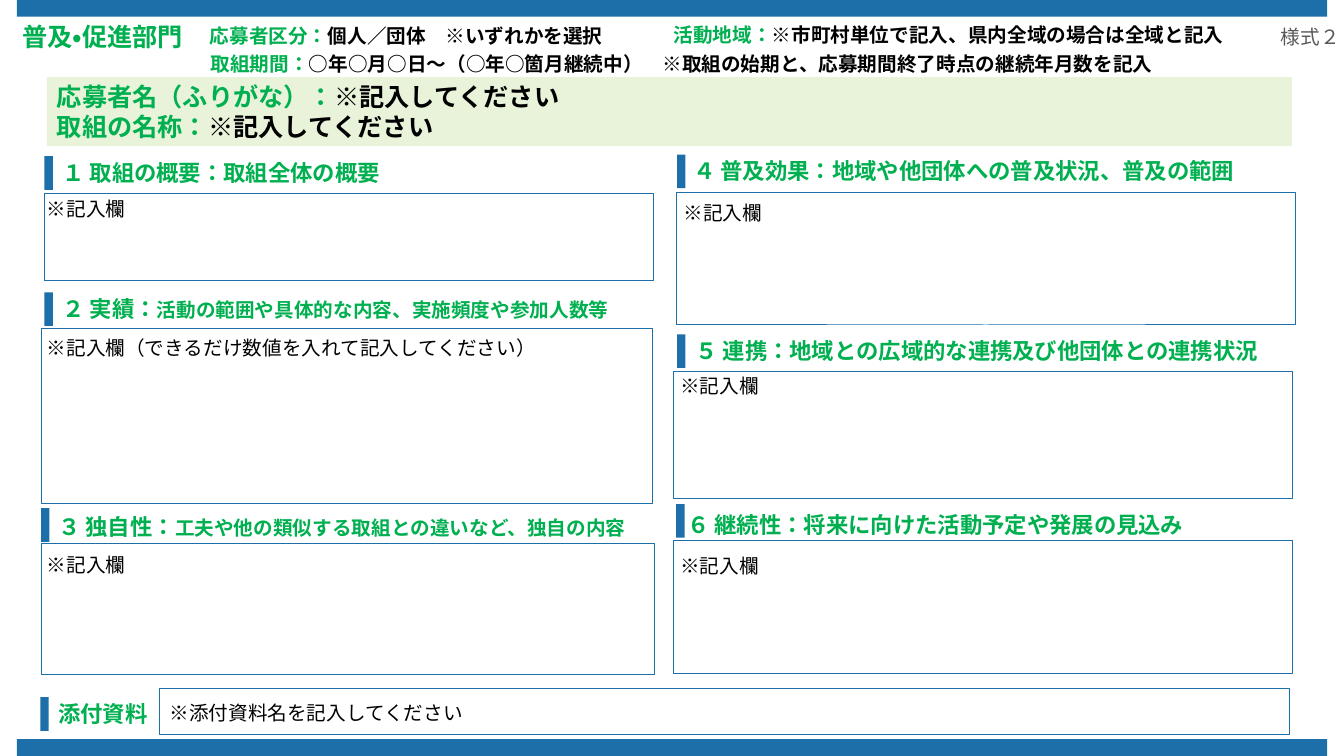
from pptx import Presentation
from pptx.dml.color import RGBColor
from pptx.enum.lang import MSO_LANGUAGE_ID
from pptx.enum.shapes import MSO_SHAPE
from pptx.enum.text import MSO_ANCHOR, MSO_AUTO_SIZE, PP_ALIGN
from pptx.util import Inches, Pt

RECTANGLE = MSO_SHAPE.RECTANGLE
MIDDLE, TOP = MSO_ANCHOR.MIDDLE, MSO_ANCHOR.TOP
FIT_SHAPE = MSO_AUTO_SIZE.SHAPE_TO_FIT_TEXT
CENTER, LEFT = PP_ALIGN.CENTER, PP_ALIGN.LEFT
JAPANESE = MSO_LANGUAGE_ID.JAPANESE

COLUMNS, ROWS = 160, 90
BLUE, GREEN, PALE = "1D6FA9", "00B050", "E8F3DA"
BLACK, GRAY = "000000", "595959"

SECTIONS = [
    ((5.3, 18.6), (6.24, 18.36, 40.7), (5.3, 23, 72.5, 10.4), (4.4, 22.9, 76.2),
     "１ 取組の概要：取組全体の概要", "", "※記入欄"),
    ((5.3, 34.8), (6.24, 34.56, 68), (4.9, 39.1, 72.8, 20.9), (4.4, 39.4, 73.6),
     "２ 実績：", "活動の範囲や具体的な内容、実施頻度や参加人数等",
     "※記入欄（できるだけ数値を入れて記入してください）"),
    ((4.9, 60.5), (5.76, 60.48, 70.7), (4.9, 64.7, 73, 15.6), (4.4, 65.2, 73),
     "３ 独自性：", "工夫や他の類似する取組との違いなど、独自の内容", "※記入欄"),
    ((80.6, 18.4), (81.36, 18.12, 67.1), (80.5, 22.9, 73.7, 15.8), (80.2, 23.3, 74.3),
     "４ 普及効果：地域や他団体への普及状況、普及の範囲", "", "※記入欄"),
    ((80.6, 39.8), (81.6, 39.6, 69.7), (80.2, 44.2, 73.7, 15.1), (79.8, 43.9, 75.4),
     "５ 連携：地域との広域的な連携及び他団体との連携状況", "", "※記入欄"),
    ((80.5, 60), (80.64, 60.24, 62.3), (80.2, 64.4, 73.7, 15.8), (79.8, 65.3, 74.3),
     "６ 継続性：将来に向けた活動予定や発展の見込み", "", "※記入欄"),
    ((4.8, 83), (5.76, 82.8, 13.2), (19, 82, 134.5, 5.4), (19, 82.8, 102.6),
     "添付資料", "", "※添付資料名を記入してください"),
]


def color(code):
    """Turn a hex string into a colour."""
    return RGBColor.from_string(code)


class FormSlide:
    """Draws the entry form on a grid of square cells."""

    font = "Calibri"

    def __init__(self, deck):
        """Add a title-only page to the deck."""
        self.page = deck.slides.add_slide(deck.slide_layouts[5])
        self.cell_width = deck.slide_width / COLUMNS
        self.cell_height = deck.slide_height / ROWS

    def area(self, left, top, width, height):
        """Convert grid cells to slide lengths."""
        return (round(left * self.cell_width), round(top * self.cell_height),
                round(width * self.cell_width), round(height * self.cell_height))

    def add_spans(self, para, spans, align=LEFT):
        """Add (text, size, colour, bold) spans to a paragraph."""
        para.alignment = align
        for text, size, code, bold in spans:
            span = para.add_run()
            span.text = text
            span.font.name, span.font.size, span.font.bold = self.font, Pt(size), bold
            span.font.color.rgb = color(code)
            span.font.language_id = JAPANESE

    def rectangle(self, cells, fill=None, line=None):
        """Draw a rectangle with an optional fill and outline."""
        box = self.page.shapes.add_shape(RECTANGLE, *self.area(*cells))
        box.shadow.inherit = False
        if fill:
            box.fill.solid()
            box.fill.fore_color.rgb = color(fill)
        else:
            box.fill.background()
        if line:
            box.line.color.rgb = color(line)
            box.line.width = Pt(0.75)
        else:
            box.line.fill.background()
        return box

    def panel(self, cells, lines):
        """Draw a filled panel with one paragraph per line."""
        frame = self.rectangle(cells, fill=PALE).text_frame
        frame.vertical_anchor = MIDDLE
        for index, spans in enumerate(lines):
            para = frame.add_paragraph() if index else frame.paragraphs[0]
            self.add_spans(para, spans)

    def title(self, cells, spans):
        """Move and fill the title placeholder."""
        box = self.page.shapes.title
        box.left, box.top, box.width, box.height = self.area(*cells)
        frame = box.text_frame
        frame.word_wrap, frame.auto_size = False, FIT_SHAPE
        frame.vertical_anchor = TOP
        self.add_spans(frame.paragraphs[0], spans, CENTER)

    def text(self, cells, spans, wrap=True):
        """Add a one-paragraph text box."""
        frame = self.page.shapes.add_textbox(*self.area(*cells)).text_frame
        frame.word_wrap, frame.auto_size = wrap, FIT_SHAPE
        self.add_spans(frame.paragraphs[0], spans)

    def section(self, bar, heading, entry, note, label, detail, hint):
        """Draw a marked heading with its entry box and hint."""
        self.rectangle(entry, line=BLUE)
        self.rectangle((*bar, 1, 4), fill=BLUE)
        spans = [(label, 16, GREEN, True)]
        if detail:
            spans.append((detail, 14, GREEN, True))
        self.text((*heading, 4.4), spans, wrap=False)
        self.text((*note, 4.1), [(hint, 14, BLACK, False)])

    def field(self, cells, label, value):
        """Add a green label followed by a black value."""
        self.text(cells, [(label, 14, GREEN, True), (value, 14, BLACK, True)])


def main():
    """Build and save the form."""
    deck = Presentation()
    deck.slide_width, deck.slide_height = Inches(13.333), Inches(7.5)
    form = FormSlide(deck)
    for top in (0, ROWS - 2):
        form.rectangle((2, top, COLUMNS - 4, 2), fill=BLUE)
    form.title((0.4, 1.9, 23.6, 4.8), [("普及・促進部門", 18, GREEN, True)])
    form.panel((5.6, 9.2, 148.2, 8.2), [
        [(label, 18, GREEN, True), ("※記入してください", 18, BLACK, True)]
        for label in ("応募者名（ふりがな）：", "取組の名称：")])
    form.field((23.8, 2.2, 56.9, 4.1), "応募者区分：", "個人／団体　※いずれかを選択")
    form.field((79, 2.1, 69, 4.1), "活動地域：",
               "※市町村単位で記入、県内全域の場合は全域と記入")
    form.field((23.9, 5.6, 129.8, 4.1), "取組期間：",
               "○年○月○日～（○年○箇月継続中）　※取組の始期と、応募期間終了時点の継続年月数を記入")
    form.text((151.3, 2.4, 13.2, 4.1), [("様式２", 14, GRAY, False)])
    for section in SECTIONS:
        form.section(*section)
    deck.save("out.pptx")


if __name__ == "__main__":
    main()
